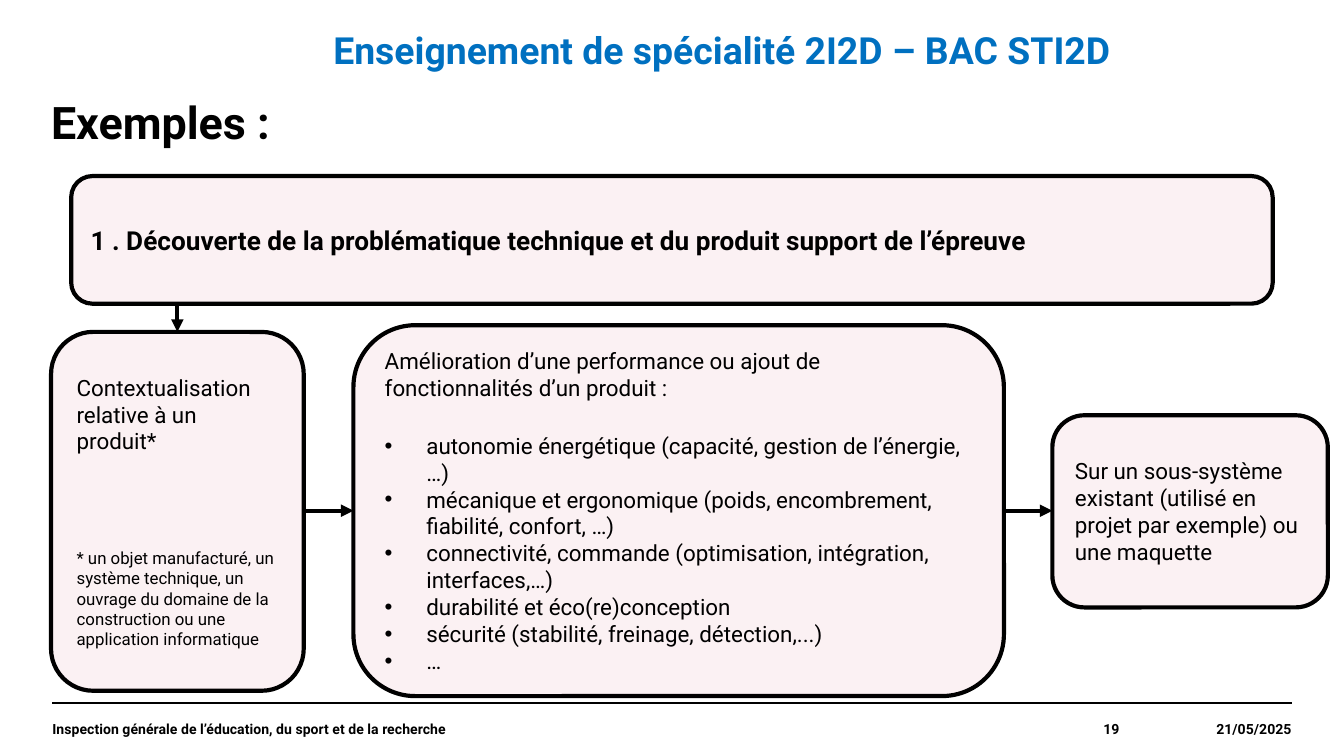
from pptx import Presentation
from pptx.util import Inches, Pt
from pptx.dml.color import RGBColor
from pptx.enum.shapes import MSO_SHAPE, MSO_CONNECTOR
from pptx.enum.text import PP_ALIGN, MSO_ANCHOR
from pptx.oxml.ns import qn
from lxml.etree import SubElement

BLACK = RGBColor(0, 0, 0)
BLUE = RGBColor(0x00, 0x70, 0xC0)
PINK = RGBColor(0xF2, 0xC9, 0xD1)


def write(para, text, size, bold=False, color=BLACK, align=PP_ALIGN.LEFT):
    para.alignment = align
    run = para.add_run()
    run.text = text
    style = {"name": "Roboto", "size": Pt(size), "bold": bold}
    for key, value in style.items():
        setattr(run.font, key, value)
    run.font.color.rgb = color


def draw(start, end, width, arrow=True):
    ends = [Inches(n) for n in (*start, *end)]
    line = slide.shapes.add_connector(MSO_CONNECTOR.STRAIGHT, *ends)
    line.line.color.rgb = BLACK
    line.line.width = Pt(width)
    if arrow:
        SubElement(line.line._get_or_add_ln(), qn("a:tailEnd"), type="triangle")
    SubElement(line._element.spPr, qn("a:effectLst"))


deck = Presentation()
deck.slide_width = Inches(10)
deck.slide_height = Inches(10) * 9 // 16
slide = deck.slides.add_slide(deck.slide_layouts[6])

draw((0.39, 5.23), (9.61, 5.23), 0.8, arrow=False)

top, mid = MSO_ANCHOR.TOP, MSO_ANCHOR.MIDDLE
left, right = PP_ALIGN.LEFT, PP_ALIGN.RIGHT
labels = [
    ("Exemples :", (0.38, 0.75, 9.21, 0.39), 24, BLACK, left, top),
    ("Enseignement de spécialité 2I2D – BAC STI2D", (2.48, 0.2, 6.22, 0.39), 20, BLUE, left, top),
    ("21/05/2025", (8.33, 5.23, 1.28, 0.39), 7.5, BLACK, right, mid),
    ("Inspection générale de l’éducation, du sport et de la recherche",
     (0.39, 5.23, 6.46, 0.39), 7.5, BLACK, left, mid),
    ("19", (6.85, 5.23, 1.48, 0.39), 7.5, BLACK, right, mid),
]
for text, place, size, color, align, anchor in labels:
    frame = slide.shapes.add_textbox(*map(Inches, place)).text_frame
    form = {"word_wrap": True, "vertical_anchor": anchor, "margin_left": 0,
            "margin_right": 0, "margin_top": 0, "margin_bottom": 0}
    for key, value in form.items():
        setattr(frame, key, value)
    para = frame.paragraphs[0]
    if size == 24:
        para.line_spacing = 0.9
    write(para, text, size, True, color, align)

goals = [
    "autonomie énergétique (capacité, gestion de l’énergie, …)",
    "mécanique et ergonomique (poids, encombrement, fiabilité, confort, …)",
    "connectivité, commande (optimisation, intégration, interfaces,…)",
    "durabilité et éco(re)conception",
    "sécurité (stabilité, freinage, détection,...)",
    "…",
]
boxes = [
    ((0.53, 1.31, 8.94, 0.95), 14, 0,
     ["1 . Découverte de la problématique technique et du produit support de l’épreuve"]),
    ((2.63, 2.42, 4.84, 2.76), 12, 16.4,
     ["Amélioration d’une performance ou ajout de fonctionnalités d’un produit :"] + goals),
    ((7.83, 3.09, 2.05, 1.43), 12, 0,
     ["Sur un sous-système existant (utilisé en projet par exemple) ou une maquette"]),
    ((0.38, 2.47, 1.88, 2.67), 12, 50,
     ["Contextualisation relative à un produit*",
      "* un objet manufacturé, un système technique, un ouvrage du domaine "
      "de la construction ou une application informatique"]),
]
for place, size, gap, texts in boxes:
    box = slide.shapes.add_shape(MSO_SHAPE.ROUNDED_RECTANGLE, *map(Inches, place))
    box.shadow.inherit = False
    box.fill.solid()
    box.fill.fore_color.rgb = PINK
    tint = box._element.spPr.find(qn("a:solidFill"))[0]
    SubElement(tint, qn("a:alpha"), val="25000")
    box.line.color.rgb = BLACK
    box.line.width = Pt(2.25)
    frame = box.text_frame
    frame.word_wrap = True
    frame.vertical_anchor = mid
    for rank, text in enumerate(texts):
        para = frame.paragraphs[0] if rank == 0 else frame.add_paragraph()
        if rank == 1:
            para.space_before = Pt(gap)
        if text in goals:
            props = para._p.get_or_add_pPr()
            props.set("marL", str(Inches(0.31)))
            props.set("indent", str(-Inches(0.31)))
            SubElement(props, qn("a:buFont"), typeface="Arial")
            SubElement(props, qn("a:buChar"), char="•")
        write(para, text, 9 if text.startswith("*") else size, size == 14)

for start, end in [((7.47, 3.8), (7.83, 3.8)), ((2.26, 3.8), (2.63, 3.8)),
                   ((1.32, 2.26), (1.32, 2.47))]:
    draw(start, end, 2.25)

deck.save("out.pptx")
